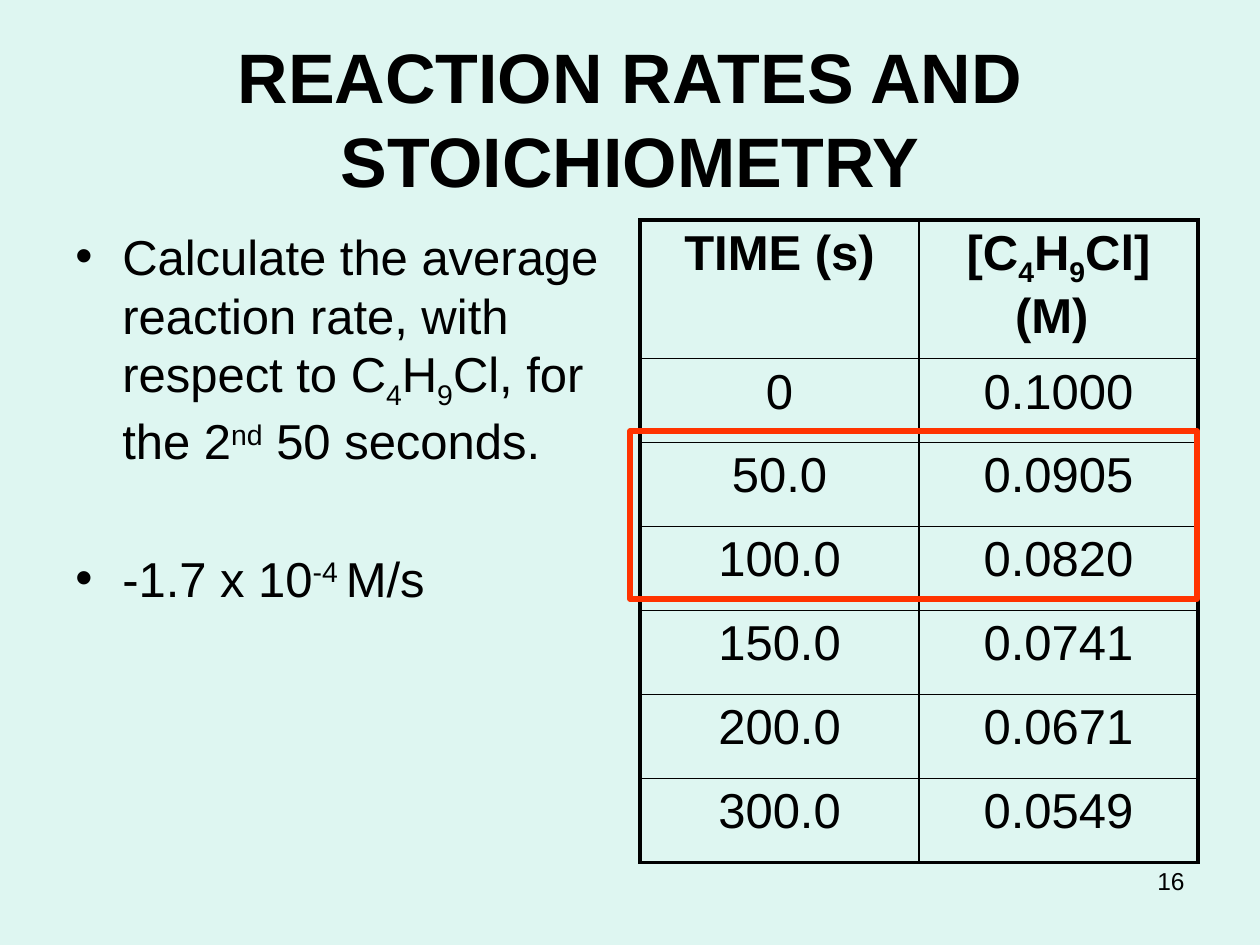
import lxml.etree
import pptx
import pptx.dml.color
import pptx.enum.shapes
import pptx.enum.text
import pptx.oxml.ns
import pptx.util

BLACK = pptx.dml.color.RGBColor(0x00, 0x00, 0x00)
MINT = pptx.dml.color.RGBColor(0xDE, 0xF6, 0xF1)
RED = pptx.dml.color.RGBColor(0xFF, 0x33, 0x00)

PX_PER_INCH = 126
SUB, SUPER = -25, 30
ALIGN = pptx.enum.text.PP_ALIGN
ANCHOR = pptx.enum.text.MSO_ANCHOR

FORMULA = [("C", 0), ("4", SUB), ("H", 0), ("9", SUB), ("Cl", 0)]
QUESTION = [("Calculate the average reaction rate, with respect to ", 0), *FORMULA,
            (", for the 2", 0), ("nd", SUPER), (" 50 seconds.", 0)]
ANSWER = [("-1.7 x 10", 0), ("-4 ", SUPER), ("M/s", 0)]
ROWS = [
    ("TIME (s)", [("[", 0), *FORMULA, ("] (M) ", 0)]),
    ("0", "0.1000"),
    ("50.0", "0.0905"),
    ("100.0", "0.0820"),
    ("150.0", "0.0741"),
    ("200.0", "0.0671"),
    ("300.0", "0.0549"),
]


def px(length):
    return pptx.util.Emu(round(length * 914400 / PX_PER_INCH))


def add_xml(parent, tag, **attributes):
    return lxml.etree.SubElement(parent, pptx.oxml.ns.qn(tag), attributes)


def write_text(para, text, *, size=28, bold=False, align=ALIGN.LEFT, before=0,
               font="Arial", color=BLACK):
    """Fill a paragraph with a string or with (string, baseline percent) pairs."""
    para.alignment = align
    para.space_before = pptx.util.Pt(before)
    for words, baseline in [(text, 0)] if isinstance(text, str) else text:
        span = para.add_run()
        span.text = words
        span.font.name = font
        span.font.size = pptx.util.Pt(size)
        span.font.bold = bold
        span.font.color.rgb = color
        if baseline:
            span.font._element.set("baseline", str(baseline * 1000))


class Page:
    """The current slide and the style its elements share."""

    thin, thick, outline = 1, 2.25, 3
    gap = 5.6
    indent = 47

    def __init__(self, deck):
        self.slide = deck.slides.add_slide(deck.slide_layouts[6])
        self.slide.background.fill.solid()
        self.slide.background.fill.fore_color.rgb = MINT

    def text_box(self, left, top, width, height, anchor=ANCHOR.TOP):
        box = self.slide.shapes.add_textbox(px(left), px(top), px(width), px(height))
        box.text_frame.word_wrap = True
        box.text_frame.vertical_anchor = anchor
        return box.text_frame

    def label(self, text, *place, anchor=ANCHOR.TOP, **style):
        write_text(self.text_box(*place, anchor=anchor).paragraphs[0], text, **style)

    def bullets(self, items, *place):
        """Add a list of (text, space before in points) items."""
        frame = self.text_box(*place)
        for index, (text, before) in enumerate(items):
            para = frame.add_paragraph() if index else frame.paragraphs[0]
            write_text(para, text, before=before)
            properties = para._p.get_or_add_pPr()
            properties.set("marL", str(px(self.indent)))
            properties.set("indent", str(-px(self.indent)))
            add_xml(properties, "a:buFont", typeface="Arial")
            add_xml(properties, "a:buChar", char="•")

    def borders(self, cell, widths):
        properties = cell._tc.get_or_add_tcPr()
        for side, width in zip("LRTB", widths):
            line = add_xml(properties, f"a:ln{side}", w=str(pptx.util.Pt(width)))
            add_xml(add_xml(line, "a:solidFill"), "a:srgbClr", val=str(BLACK))

    def table(self, rows, left, top, column_width, heights):
        row_count, column_count = len(rows), len(rows[0])
        table = self.slide.shapes.add_table(
            row_count, column_count, px(left), px(top),
            px(column_width * column_count), px(sum(heights))).table
        table.first_row = table.horz_banding = False
        for column in table.columns:
            column.width = px(column_width)
        for r, values in enumerate(rows):
            table.rows[r].height = px(heights[r])
            for c, value in enumerate(values):
                cell = table.cell(r, c)
                write_text(cell.text_frame.paragraphs[0], value, bold=r == 0,
                           align=ALIGN.CENTER, before=self.gap)
                outer = (c == 0, c == column_count - 1, r == 0, r == row_count - 1)
                self.borders(cell, [self.thick if edge else self.thin for edge in outer])
                cell.fill.background()

    def frame(self, left, top, width, height):
        shape = self.slide.shapes.add_shape(
            pptx.enum.shapes.MSO_SHAPE.RECTANGLE, px(left), px(top), px(width), px(height))
        shape.shadow.inherit = False
        shape.fill.background()
        shape.line.color.rgb = RED
        shape.line.width = pptx.util.Pt(self.outline)


def main():
    deck = pptx.Presentation()
    deck.slide_width, deck.slide_height = px(1260), px(945)
    page = Page(deck)
    page.label("16", 903, 860, 294, 66, size=14, align=ALIGN.RIGHT)
    page.label("REACTION RATES AND STOICHIOMETRY", 63, 38, 1134, 158,
               anchor=ANCHOR.MIDDLE, size=40, bold=True, align=ALIGN.CENTER)
    page.bullets([(QUESTION, page.gap), (ANSWER, 45)], 63, 220, 557, 624)
    page.table(ROWS, 640, 220, 279, [130] + [84] * (len(ROWS) - 1))
    page.frame(630, 431, 567, 168)
    deck.save("out.pptx")


if __name__ == "__main__":
    main()
